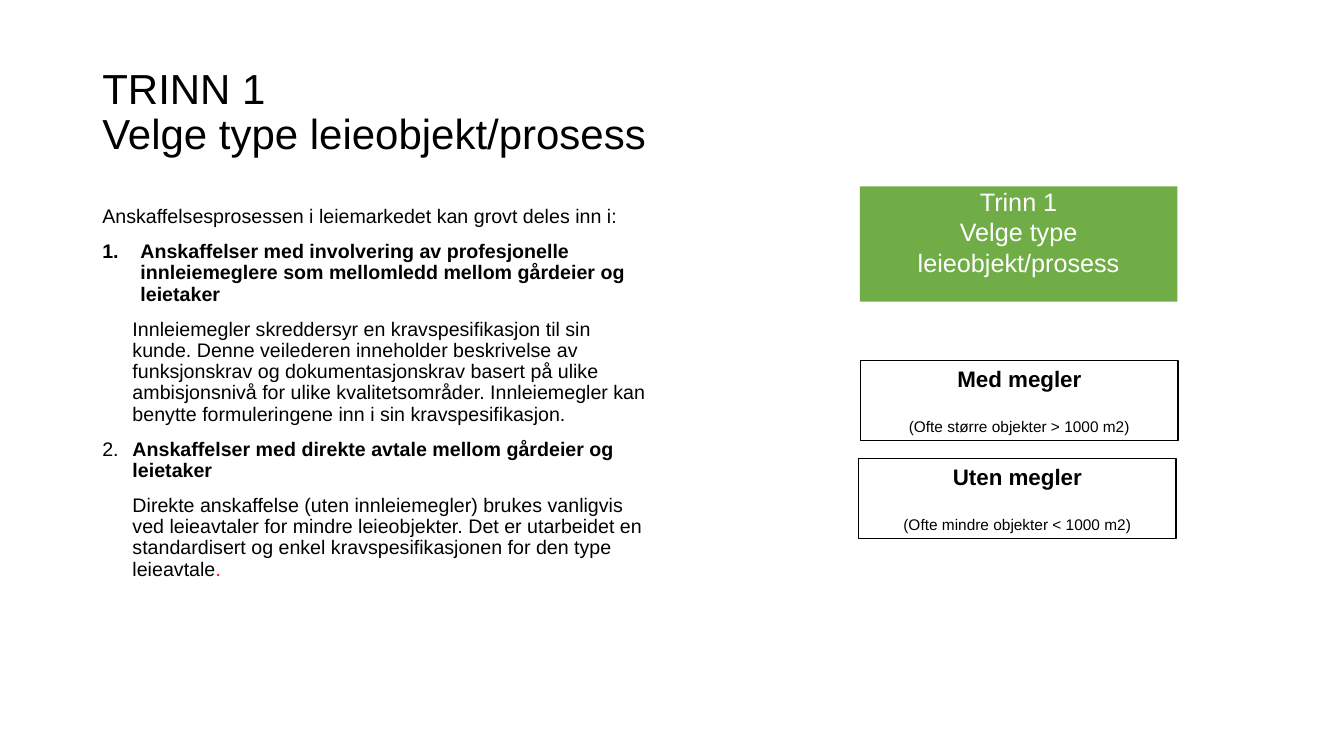
from lxml import etree
from pptx import Presentation
from pptx.dml.color import RGBColor
from pptx.enum import shapes, text
from pptx.oxml import ns
from pptx.util import Cm, Pt

FONT = "Arial"
BLACK, WHITE, GREEN, RED = "000000", "FFFFFF", "70AD47", "FF0000"


def color(fmt, code):
    fmt.rgb = RGBColor.from_string(code)


def add_run(para, words, size, code=BLACK, bold=False):
    run = para.add_run()
    run.text = words
    run.font.name = FONT
    run.font.size = Pt(size)
    run.font.bold = bold
    color(run.font.color, code)


def next_para(frame, first):
    return frame.paragraphs[0] if first else frame.add_paragraph()


def add_text(slide, left, top, width, height, anchor):
    frame = slide.shapes.add_textbox(Cm(left), Cm(top), Cm(width), Cm(height)).text_frame
    frame.word_wrap = True
    frame.vertical_anchor = anchor
    return frame


def add_title(slide, lines):
    frame = add_text(slide, 2.33, 1.02, 29.21, 3.68, text.MSO_ANCHOR.MIDDLE)
    para = frame.paragraphs[0]
    para.line_spacing = 0.9
    for i, line in enumerate(lines):
        if i:
            para.add_line_break()
        add_run(para, line, 30)


def set_indent(para, left, hang, number=False):
    props = para._p.get_or_add_pPr()
    props.set("marL", str(Cm(left)))
    props.set("indent", str(-Cm(hang)))
    if number:
        font = etree.SubElement(props, ns.qn("a:buFont"))
        font.set("typeface", "+mj-lt")
        auto = etree.SubElement(props, ns.qn("a:buAutoNum"))
        auto.set("type", "arabicPeriod")


def add_body(slide, items):
    frame = add_text(slide, 2.33, 5.08, 14.4, 12.09, text.MSO_ANCHOR.TOP)
    for i, (left, hang, number, runs) in enumerate(items):
        para = next_para(frame, i == 0)
        para.line_spacing = 0.9
        para.space_before = Pt(10)
        set_indent(para, left, hang, number)
        for words, code, bold in runs:
            add_run(para, words, 14, code, bold)


def add_box(slide, left, top, height, fill, line, rows):
    """Each row is (words, size, colour, bold, space before)."""
    box = slide.shapes.add_shape(
        shapes.MSO_SHAPE.RECTANGLE, Cm(left), Cm(top), Cm(8), Cm(height))
    box.shadow.inherit = False
    box.fill.solid()
    color(box.fill.fore_color, fill)
    if line:
        color(box.line.color, line)
        box.line.width = Pt(1)
    else:
        box.line.fill.background()
    frame = box.text_frame
    frame.word_wrap = True
    frame.vertical_anchor = text.MSO_ANCHOR.MIDDLE
    for i, (words, size, code, bold, gap) in enumerate(rows):
        para = next_para(frame, i == 0)
        para.alignment = text.PP_ALIGN.CENTER
        para.space_before = Pt(gap)
        add_run(para, words, size, code, bold)
    return frame


def main():
    deck = Presentation()
    deck.slide_width, deck.slide_height = Cm(33.87), Cm(19.05)
    slide = deck.slides.add_slide(deck.slide_layouts[6])

    # Heading
    add_title(slide, ["TRINN 1", "Velge type leieobjekt/prosess"])

    # Explanation: left indent, hanging indent, numbered, runs
    add_body(slide, [
        (0, 0, False, [
            ("Anskaffelsesprosessen i leiemarkedet kan grovt deles inn i:", BLACK, False)]),
        (0.96, 0.96, True, [
            ("Anskaffelser med involvering av profesjonelle innleiemeglere som "
             "mellomledd mellom gårdeier og leietaker", BLACK, True)]),
        (0.76, 0, False, [
            ("Innleiemegler skreddersyr en kravspesifikasjon til sin kunde. Denne "
             "veilederen inneholder beskrivelse av funksjonskrav og dokumentasjonskrav "
             "basert på ulike ambisjonsnivå for ulike kvalitetsområder. Innleiemegler "
             "kan benytte formuleringene inn i sin kravspesifikasjon.", BLACK, False)]),
        (0.76, 0.76, False, [
            ("2. \t", BLACK, False),
            ("Anskaffelser med direkte avtale mellom gårdeier og leietaker", BLACK, True)]),
        (0.76, 0, False, [
            ("Direkte anskaffelse (uten innleiemegler) brukes vanligvis ved leieavtaler "
             "for mindre leieobjekter. Det er utarbeidet en standardisert og enkel "
             "kravspesifikasjonen for den type leieavtale", BLACK, False),
            (".", RED, False)]),
    ])

    # The two ways to rent
    for left, top, name, note in [
            (21.69, 9.09, "Med megler", "(Ofte større objekter > 1000 m2)"),
            (21.64, 11.56, "Uten megler", "(Ofte mindre objekter < 1000 m2)")]:
        add_box(slide, left, top, 2.01, WHITE, BLACK, [
            (name, 16, BLACK, True, 0), (note, 11, BLACK, False, 18)])

    # Step box, with its text at the top edge
    step = add_box(slide, 21.67, 4.7, 2.9, GREEN, None, [
        ("Trinn 1", 18, WHITE, False, 0),
        ("Velge type leieobjekt/prosess", 18, WHITE, False, 0)])
    step.vertical_anchor = text.MSO_ANCHOR.TOP
    step.margin_top = Cm(0)

    deck.save("out.pptx")


if __name__ == "__main__":
    main()
